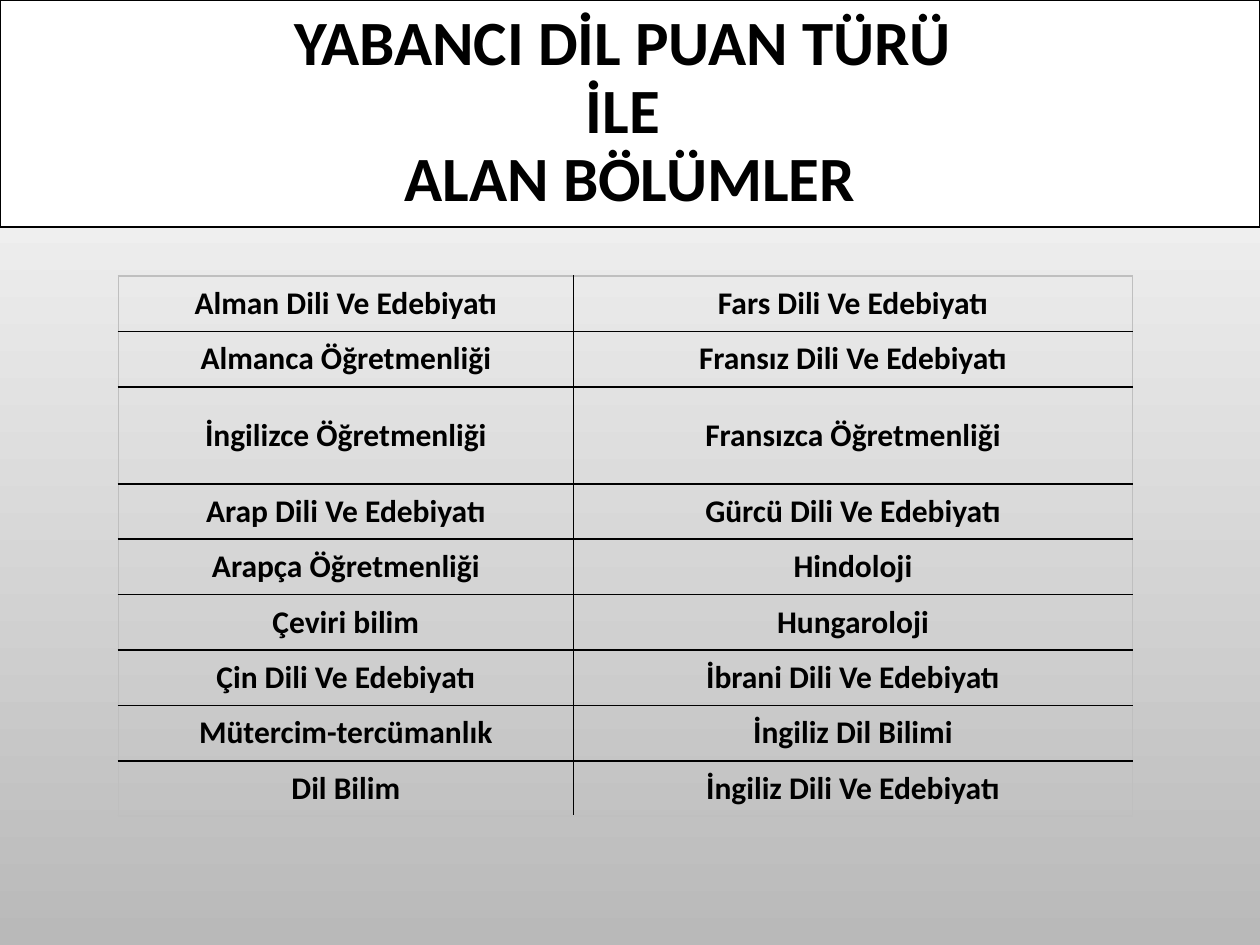
from dataclasses import dataclass

from lxml import etree
from pptx import Presentation
from pptx.dml.color import RGBColor
from pptx.enum.shapes import MSO_SHAPE
from pptx.enum.text import MSO_ANCHOR, PP_ALIGN
from pptx.oxml.ns import qn
from pptx.util import Inches, Pt

RECT = MSO_SHAPE.RECTANGLE
MIDDLE = MSO_ANCHOR.MIDDLE
CENTER = PP_ALIGN.CENTER

TITLE = "YABANCI DİL PUAN TÜRÜ \vİLE \vALAN BÖLÜMLER"
DEPARTMENTS = [
    ("Alman Dili Ve Edebiyatı", "Fars Dili Ve Edebiyatı"),
    ("Almanca Öğretmenliği", "Fransız Dili Ve Edebiyatı"),
    ("İngilizce Öğretmenliği", "Fransızca Öğretmenliği"),
    ("Arap Dili Ve Edebiyatı", "Gürcü Dili Ve Edebiyatı"),
    ("Arapça Öğretmenliği", "Hindoloji"),
    ("Çeviri bilim", "Hungaroloji"),
    ("Çin Dili Ve Edebiyatı", "İbrani Dili Ve Edebiyatı"),
    ("Mütercim-tercümanlık", "İngiliz Dil Bilimi"),
    ("Dil Bilim", "İngiliz Dili Ve Edebiyatı"),
]
COL_WIDTHS = [3.61, 4.44]
ROW_HEIGHTS = [0.44] * 2 + [0.77] + [0.44] * 6


@dataclass(frozen=True)
class Theme:
    font: str = "Calibri"
    ink: str = "000000"
    paper: str = "FFFFFF"
    shade: str = "B9B9B9"
    frame: str = "BFBFBF"
    title_size: int = 36
    cell_size: int = 18


def write(tf, text, *, size, color, font, spacing=None):
    p = tf.paragraphs[0]
    p.text = text
    p.alignment = CENTER
    if spacing:
        p.line_spacing = spacing
    for r in p.runs:
        r.font.name = font
        r.font.size = Pt(size)
        r.font.bold = True
        r.font.color.rgb = RGBColor.from_string(color)


def set_borders(cell, colors, width=1):
    tc_pr = cell._tc.get_or_add_tcPr()
    for i, (side, color) in enumerate(colors.items()):
        ln = etree.Element(qn(f"a:ln{side}"), w=str(Pt(width)))
        fill = etree.SubElement(ln, qn("a:solidFill"))
        etree.SubElement(fill, qn("a:srgbClr"), val=color)
        tc_pr.insert(i, ln)


class SlideBuilder:
    def __init__(self, slide, theme):
        self.s = slide
        self.theme = theme

    def background(self):
        fill = self.s.background.fill
        fill.gradient()
        fill.gradient_angle = 270
        for stop, color in zip(fill.gradient_stops, (self.theme.paper, self.theme.shade)):
            stop.color.rgb = RGBColor.from_string(color)

    def banner(self, text, x, y, w, h):
        t = self.theme
        sp = self.s.shapes.add_shape(RECT, Inches(x), Inches(y), Inches(w), Inches(h))
        sp.shadow.inherit = False
        sp.fill.solid()
        sp.fill.fore_color.rgb = RGBColor.from_string(t.paper)
        sp.line.color.rgb = RGBColor.from_string(t.ink)
        sp.line.width = Pt(1.25)
        tf = sp.text_frame
        tf.word_wrap = True
        tf.vertical_anchor = MIDDLE
        write(tf, text, size=t.title_size, color=t.ink, font=t.font, spacing=0.9)

    def table(self, rows, x, y, widths, heights):
        t = self.theme
        last_row, last_col = len(heights) - 1, len(widths) - 1
        table = self.s.shapes.add_table(
            len(heights), len(widths), Inches(x), Inches(y),
            Inches(sum(widths)), Inches(sum(heights))).table
        table.first_row = table.horz_banding = False
        for col, width in zip(table.columns, widths):
            col.width = Inches(width)
        for i, (row, height) in enumerate(zip(table.rows, heights)):
            row.height = Inches(height)
            for j, cell in enumerate(row.cells):
                cell.fill.background()
                cell.vertical_anchor = MIDDLE
                write(cell.text_frame, rows[i][j], size=t.cell_size, color=t.ink, font=t.font)
                outer = {"L": j == 0, "R": j == last_col, "T": i == 0, "B": i == last_row}
                set_borders(cell, {k: t.frame if edge else t.ink for k, edge in outer.items()})


def main():
    """Build the slide listing the foreign-language departments."""
    prs = Presentation()
    prs.slide_width, prs.slide_height = Inches(10), Inches(7.5)
    builder = SlideBuilder(prs.slides.add_slide(prs.slide_layouts[6]), Theme())
    builder.background()
    builder.banner(TITLE, 0, 0, 10, 1.8)
    builder.table(DEPARTMENTS, 0.94, 2.19, COL_WIDTHS, ROW_HEIGHTS)
    prs.save("out.pptx")


if __name__ == "__main__":
    main()
